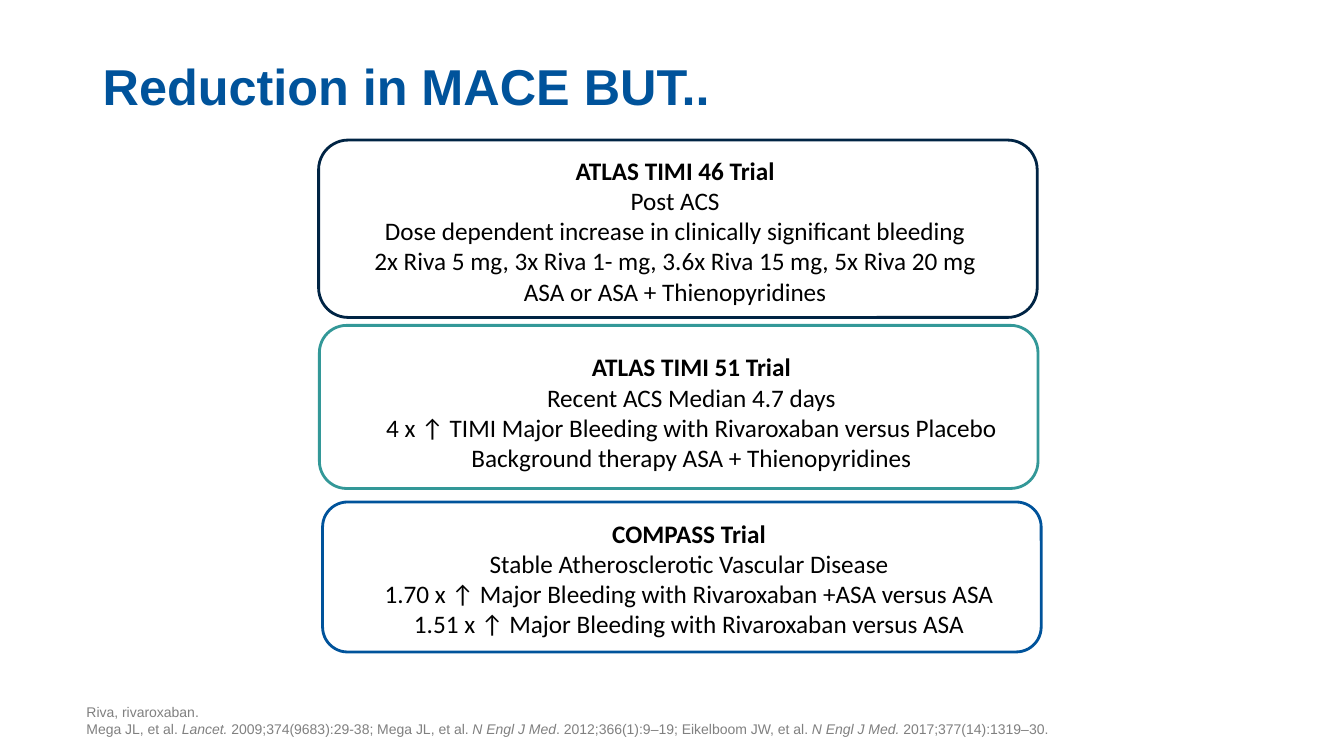
from dataclasses import dataclass

from pptx import Presentation
from pptx.dml.color import RGBColor
from pptx.enum.shapes import MSO_SHAPE
from pptx.enum.text import MSO_ANCHOR, MSO_AUTO_SIZE, PP_ALIGN
from pptx.slide import Slide
from pptx.text.text import TextFrame, _Paragraph
from pptx.util import Cm, Pt

COLORS = {
    "blue": "00539B",
    "navy": "002444",
    "teal": "339898",
    "black": "000000",
    "gray": "808080",
}
FRAME_WIDTH = 18.11


@dataclass
class Box:
    left: float
    top: float
    width: float
    height: float

    def lengths(self) -> tuple[Cm, Cm, Cm, Cm]:
        return Cm(self.left), Cm(self.top), Cm(self.width), Cm(self.height)


@dataclass
class Style:
    font: str
    size: int
    color: str


@dataclass
class Trial:
    name: str
    findings: list[str]
    text_box: Box
    frame: Box
    color: str


TITLE = Style("Arial", 36, "blue")
BODY = Style("Calibri", 18, "black")
SOURCE = Style("Arial", 10, "gray")

TRIALS = [
    Trial(
        "ATLAS TIMI 46 Trial",
        [
            "Post ACS",
            "Dose dependent increase in clinically significant bleeding",
            "2x Riva 5 mg, 3x Riva 1- mg, 3.6x Riva 15 mg, 5x Riva 20 mg",
            "ASA or ASA + Thienopyridines",
        ],
        Box(9.09, 3.78, 15.85, 4.11),
        Box(8.03, 3.53, FRAME_WIDTH, 4.47),
        "navy",
    ),
    Trial(
        "ATLAS TIMI 51 Trial",
        [
            "Recent ACS Median 4.7 days",
            "4 x ↑ TIMI Major Bleeding with Rivaroxaban versus Placebo",
            "Background therapy ASA + Thienopyridines",
        ],
        Box(9.4, 8.74, 16.05, 3.33),
        Box(8.05, 8.2, FRAME_WIDTH, 4.11),
        "teal",
    ),
    Trial(
        "COMPASS Trial",
        [
            "Stable Atherosclerotic Vascular Disease",
            "1.70 x ↑ Major Bleeding with Rivaroxaban +ASA versus ASA",
            "1.51 x ↑ Major Bleeding with Rivaroxaban versus ASA",
        ],
        Box(9.35, 12.93, 16.03, 3.33),
        Box(8.13, 12.65, FRAME_WIDTH, 3.78),
        "blue",
    ),
]

CITATIONS = [
    ("Mega JL, et al. ", False),
    ("Lancet. ", True),
    ("2009;374(9683):29-38; Mega JL, et al. ", False),
    ("N Engl J Med", True),
    (". 2012;366(1):9–19; Eikelboom JW, et al. ", False),
    ("N Engl J Med. ", True),
    ("2017;377(14):1319–30.", False),
]


def rgb(name: str) -> RGBColor:
    return RGBColor.from_string(COLORS[name])


def add_text_box(s: Slide, box: Box, wrap: bool = True) -> TextFrame:
    tf = s.shapes.add_textbox(*box.lengths()).text_frame
    tf.word_wrap = wrap
    return tf


def add_run(p: _Paragraph, text: str, style: Style, bold: bool = False, italic: bool = False) -> None:
    r = p.add_run()
    r.text = text
    r.font.name = style.font
    r.font.size = Pt(style.size)
    r.font.color.rgb = rgb(style.color)
    r.font.bold = bold
    r.font.italic = italic


def add_title(s: Slide) -> None:
    tf = add_text_box(s, Box(2.34, 0, 29.21, 3.07))
    tf.vertical_anchor = MSO_ANCHOR.BOTTOM
    p = tf.paragraphs[0]
    p.line_spacing = 0.9
    add_run(p, "Reduction in MACE BUT..", TITLE, bold=True)


def add_trial_text(s: Slide, trial: Trial) -> None:
    tf = add_text_box(s, trial.text_box, wrap=False)
    tf.auto_size = MSO_AUTO_SIZE.SHAPE_TO_FIT_TEXT
    p = tf.paragraphs[0]
    p.alignment = PP_ALIGN.CENTER
    add_run(p, trial.name, BODY, bold=True)
    for finding in trial.findings:
        p = tf.add_paragraph()
        p.alignment = PP_ALIGN.CENTER
        add_run(p, finding, BODY)


def add_trial_frame(s: Slide, trial: Trial) -> None:
    sp = s.shapes.add_shape(MSO_SHAPE.ROUNDED_RECTANGLE, *trial.frame.lengths())
    sp.shadow.inherit = False
    sp.fill.background()
    sp.line.color.rgb = rgb(trial.color)
    sp.line.width = Pt(2)


def add_sources(s: Slide) -> None:
    tf = add_text_box(s, Box(1.93, 17.6, 29.21, 1.02))
    add_run(tf.paragraphs[0], "Riva, rivaroxaban.", SOURCE)
    p = tf.add_paragraph()
    for text, italic in CITATIONS:
        add_run(p, text, SOURCE, italic=italic)


def main() -> None:
    prs = Presentation()
    prs.slide_width, prs.slide_height = Cm(33.87), Cm(19.05)
    s = prs.slides.add_slide(prs.slide_layouts[6])
    add_title(s)
    for trial in TRIALS:
        add_trial_text(s, trial)
        add_trial_frame(s, trial)
    add_sources(s)
    prs.save("out.pptx")


if __name__ == "__main__":
    main()
